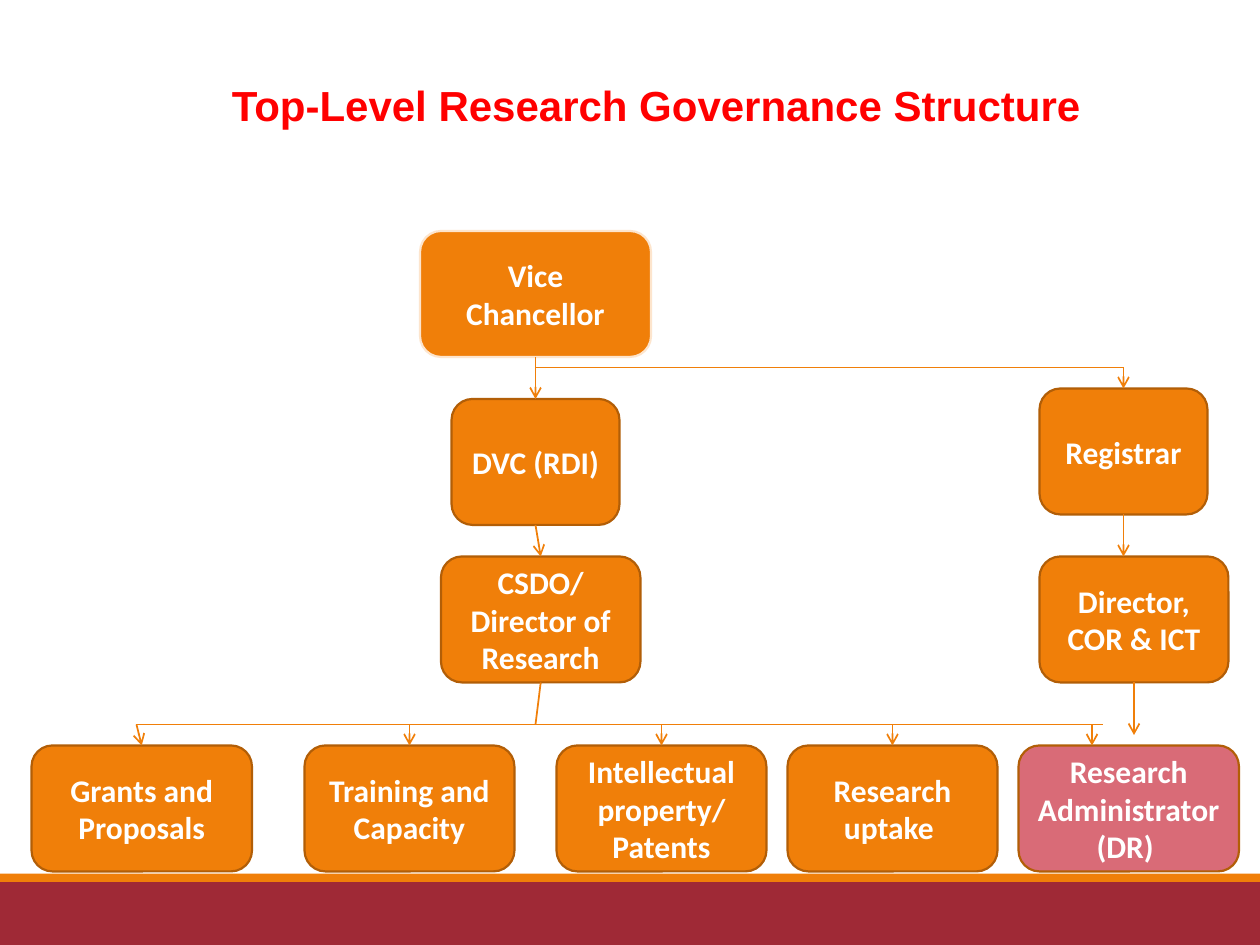
"""Build the top-level research governance chart on a 120 by 90 grid."""
from lxml.etree import SubElement
from pptx import Presentation
from pptx.dml.color import RGBColor
from pptx.enum.shapes import MSO_CONNECTOR, MSO_SHAPE
from pptx.enum.text import MSO_ANCHOR, PP_ALIGN
from pptx.oxml.ns import qn
from pptx.util import Inches, Pt

COLORS = {
    "title": "FF0000",
    "orange": "F07F09",
    "outline": "B25E07",
    "pale": "FDE5CD",
    "rose": "D96B77",
    "maroon": "9F2936",
    "white": "FFFFFF",
}
COLUMNS, ROWS = 120, 90
BOX_ROWS = 12
BUS_ROW, UNIT_ROW = 69, 71


def color(name):
    return RGBColor.from_string(COLORS[name])


def write(frame, text, *, size=18, font="Calibri", ink="white", anchor=MSO_ANCHOR.MIDDLE):
    frame.word_wrap = True
    frame.vertical_anchor = anchor
    frame.text = text
    for paragraph in frame.paragraphs:
        paragraph.alignment = PP_ALIGN.CENTER
        style = paragraph.runs[0].font
        style.size, style.name, style.bold = Pt(size), font, True
        style.color.rgb = color(ink)


class Chart:
    def __init__(self, deck):
        self.shapes = deck.slides.add_slide(deck.slide_layouts[6]).shapes
        self.cell_width = deck.slide_width / COLUMNS
        self.cell_height = deck.slide_height / ROWS

    def place(self, column, row):
        return round(column * self.cell_width), round(row * self.cell_height)

    def panel(self, kind, column, row, width, height, fill):
        panel = self.shapes.add_shape(kind, *self.place(column, row), *self.place(width, height))
        panel.shadow.inherit = False
        panel.fill.solid()
        panel.fill.fore_color.rgb = color(fill)
        return panel

    def band(self, row, height, fill):
        self.panel(MSO_SHAPE.RECTANGLE, 0, row, COLUMNS, height, fill).line.fill.background()

    def title(self, text, column, row, width, height):
        heading = self.shapes.add_textbox(*self.place(column, row), *self.place(width, height))
        write(heading.text_frame, text, size=24, font="Arial", ink="title", anchor=MSO_ANCHOR.TOP)

    def role(self, text, column, row, width, fill="orange", outline="outline"):
        role = self.panel(MSO_SHAPE.ROUNDED_RECTANGLE, column, row, width, BOX_ROWS, fill)
        role.line.color.rgb = color(outline)
        role.line.width = Pt(1.25)
        write(role.text_frame, text)
        return role

    def link(self, start, end, arrow=True):
        """Draw a line between grid points or from a role's bottom to a role's top."""
        begin = self.place(*start) if isinstance(start, tuple) else (0, 0)
        finish = self.place(*end) if isinstance(end, tuple) else (0, 0)
        link = self.shapes.add_connector(MSO_CONNECTOR.STRAIGHT, *begin, *finish)
        if not isinstance(start, tuple):
            link.begin_connect(start, 2)
        if not isinstance(end, tuple):
            link.end_connect(end, 0)
        link.line.color.rgb = color("orange")
        link.line.width = Pt(1)
        if arrow:
            SubElement(link.line._get_or_add_ln(), qn("a:tailEnd"), type="arrow")
        SubElement(link._element.spPr, qn("a:effectLst"))


def main():
    deck = Presentation()
    deck.slide_width, deck.slide_height = Inches(10), Inches(7.5)
    chart = Chart(deck)

    chart.band(84, 6, "maroon")
    chart.band(83.2, 0.8, "orange")
    chart.title("Top-Level Research Governance Structure", 5, 7, 115, 8)

    chancellor = chart.role("Vice Chancellor", 40, 22, 22, outline="pale")
    deputy = chart.role("DVC (RDI)", 43, 38, 16)
    research_director = chart.role("CSDO/\nDirector of Research", 42, 53, 19)
    registrar = chart.role("Registrar", 99, 37, 16)
    ict_director = chart.role("Director, COR & ICT", 99, 53, 18)
    units = [
        chart.role(text, column, UNIT_ROW, width)
        for text, column, width in (
            ("Grants and Proposals", 3, 21),
            ("Training and Capacity", 29, 20),
            ("Intellectual property/ Patents", 53, 20),
            ("Research uptake ", 75, 20),
        )
    ]
    chart.role("Research Administrator (DR) ", 97, UNIT_ROW, 21, fill="rose")

    chart.link(chancellor, deputy)
    chart.link(deputy, research_director)
    chart.link(research_director, (51, BUS_ROW), arrow=False)
    chart.link((13, BUS_ROW), (105, BUS_ROW), arrow=False)
    for unit, column in zip(units, (13, 39, 63, 85)):
        chart.link((column, BUS_ROW), unit)
    chart.link((104, BUS_ROW), (104, UNIT_ROW))
    chart.link(registrar, (107, 53))
    chart.link(ict_director, (108, 70))
    chart.link((51, 35), (107, 35), arrow=False)
    chart.link((107, 35), registrar)

    deck.save("out.pptx")


if __name__ == "__main__":
    main()
